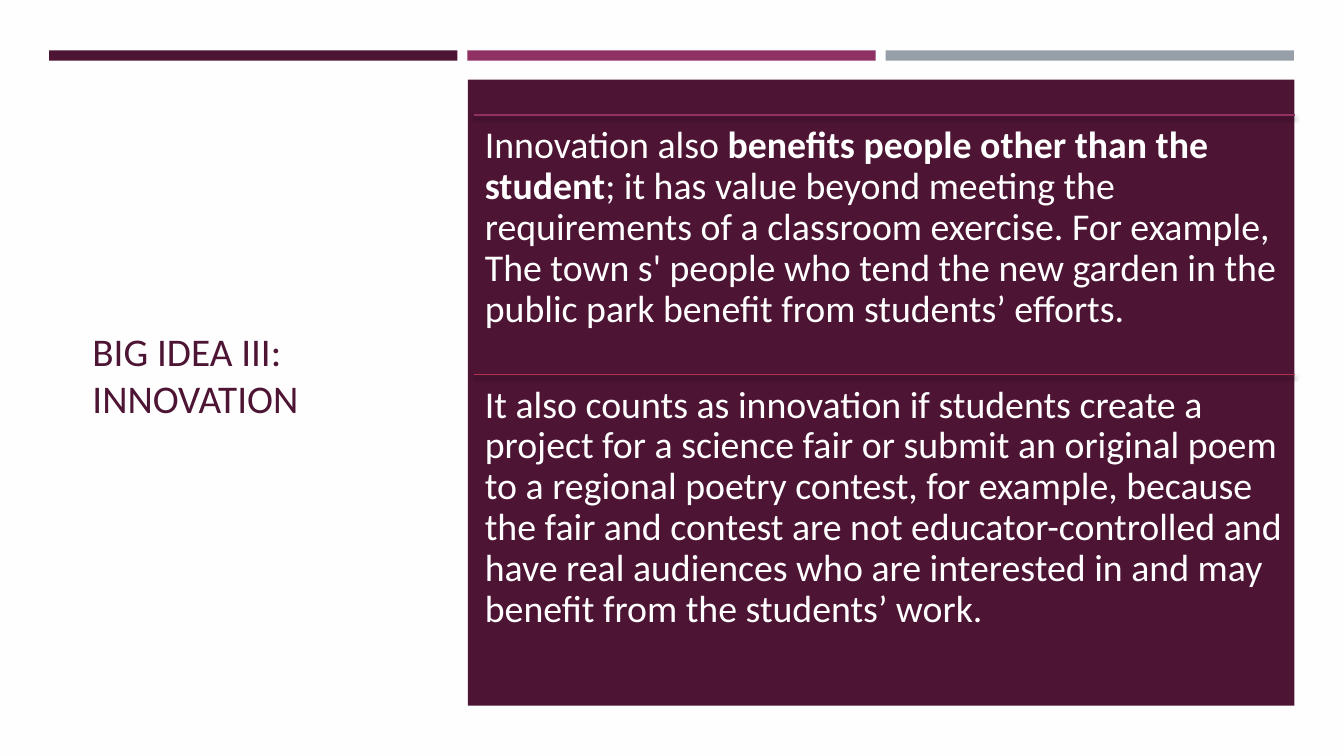
import pptx
import pptx.dml.color
import pptx.enum.shapes
import pptx.enum.text
import pptx.oxml
import pptx.oxml.ns
import pptx.util

Cm = pptx.util.Cm
Pt = pptx.util.Pt
RGBColor = pptx.dml.color.RGBColor
MSO_ANCHOR = pptx.enum.text.MSO_ANCHOR

PAPER = RGBColor(0xFF, 0xFE, 0xFF)
WHITE = RGBColor(0xFF, 0xFF, 0xFF)
PLUM = RGBColor(0x4D, 0x14, 0x34)
MAGENTA = RGBColor(0x90, 0x31, 0x63)
GREY = RGBColor(0x96, 0x9F, 0xA7)
RED = RGBColor(0xB2, 0x32, 0x4B)

FONT = "Calibri"
SHADOW = (
    f'<a:effectLst {pptx.oxml.ns.nsdecls("a")}>'
    '<a:outerShdw blurRad="38100" dist="25400" dir="5400000" rotWithShape="0">'
    '<a:srgbClr val="000000"><a:alpha val="55000"/></a:srgbClr>'
    '</a:outerShdw></a:effectLst>'
)

TITLE = "BIG IDEA III: INNOVATION"
# Each section: rule colour and runs of (text, bold)
SECTIONS = [
    (MAGENTA, [
        ("Innovation also ", False),
        ("benefits people other than the student", True),
        ("; it has value beyond meeting the requirements of a classroom "
         "exercise. For example, The town s' people who tend the new garden "
         "in the public park benefit from students’ efforts.", False),
    ]),
    (RED, [
        ("It also counts as innovation if students create a project for a "
         "science fair or submit an original poem to a regional poetry "
         "contest, for example, because the fair and contest are not "
         "educator-controlled and have real audiences who are interested in "
         "and may benefit from the students’ work.", False),
    ]),
]


def add_rect(slide, x, y, w, h, color):
    sp = slide.shapes.add_shape(
        pptx.enum.shapes.MSO_SHAPE.RECTANGLE, Cm(x), Cm(y), Cm(w), Cm(h))
    sp.shadow.inherit = False
    sp.fill.solid()
    sp.fill.fore_color.rgb = color
    sp.line.fill.background()


def add_rule(slide, x1, x2, y, color):
    line = slide.shapes.add_connector(
        pptx.enum.shapes.MSO_CONNECTOR.STRAIGHT, Cm(x1), Cm(y), Cm(x2), Cm(y))
    line.line.color.rgb = color
    line.line.width = Pt(1)
    line._element.spPr.append(pptx.oxml.parse_xml(SHADOW))


def add_text(slide, x, y, w, h, runs, *, size, color, inset=0.25,
             anchor=MSO_ANCHOR.TOP, spacing=1.0):
    tf = slide.shapes.add_textbox(Cm(x), Cm(y), Cm(w), Cm(h)).text_frame
    tf.word_wrap = True
    tf.vertical_anchor = anchor
    tf.margin_left = tf.margin_right = Cm(inset)
    tf.margin_top = tf.margin_bottom = Cm(inset)
    p = tf.paragraphs[0]
    p.line_spacing = spacing
    for text, bold in runs:
        r = p.add_run()
        r.text = text
        r.font.name = FONT
        r.font.size = Pt(size)
        r.font.bold = bold
        r.font.color.rgb = color


def main():
    prs = pptx.Presentation()
    prs.slide_width, prs.slide_height = Cm(33.87), Cm(19.05)
    slide = prs.slides.add_slide(prs.slide_layouts[6])

    # Backdrop and title
    add_rect(slide, 0, 0, 33.87, 19.05, PAPER)
    add_text(slide, 2.08, 2.9, 8.48, 13.08, [(TITLE, False)],
             size=28, color=PLUM, anchor=MSO_ANCHOR.MIDDLE)

    # Three bars along the top
    for i, color in enumerate((PLUM, MAGENTA, GREY)):
        add_rect(slide, 1.24 + i * 10.54, 1.27, 10.29, 0.26, color)

    # Panel with ruled sections
    add_rect(slide, 11.79, 2.01, 20.83, 15.77, PLUM)
    for i, (color, runs) in enumerate(SECTIONS):
        y = 2.9 + i * 6.53
        add_rule(slide, 11.94, 32.64, y, color)
        add_text(slide, 11.94, y, 20.73, 6.53, runs,
                 size=27, color=WHITE, inset=0.28, spacing=0.9)

    prs.save("out.pptx")


if __name__ == "__main__":
    main()
